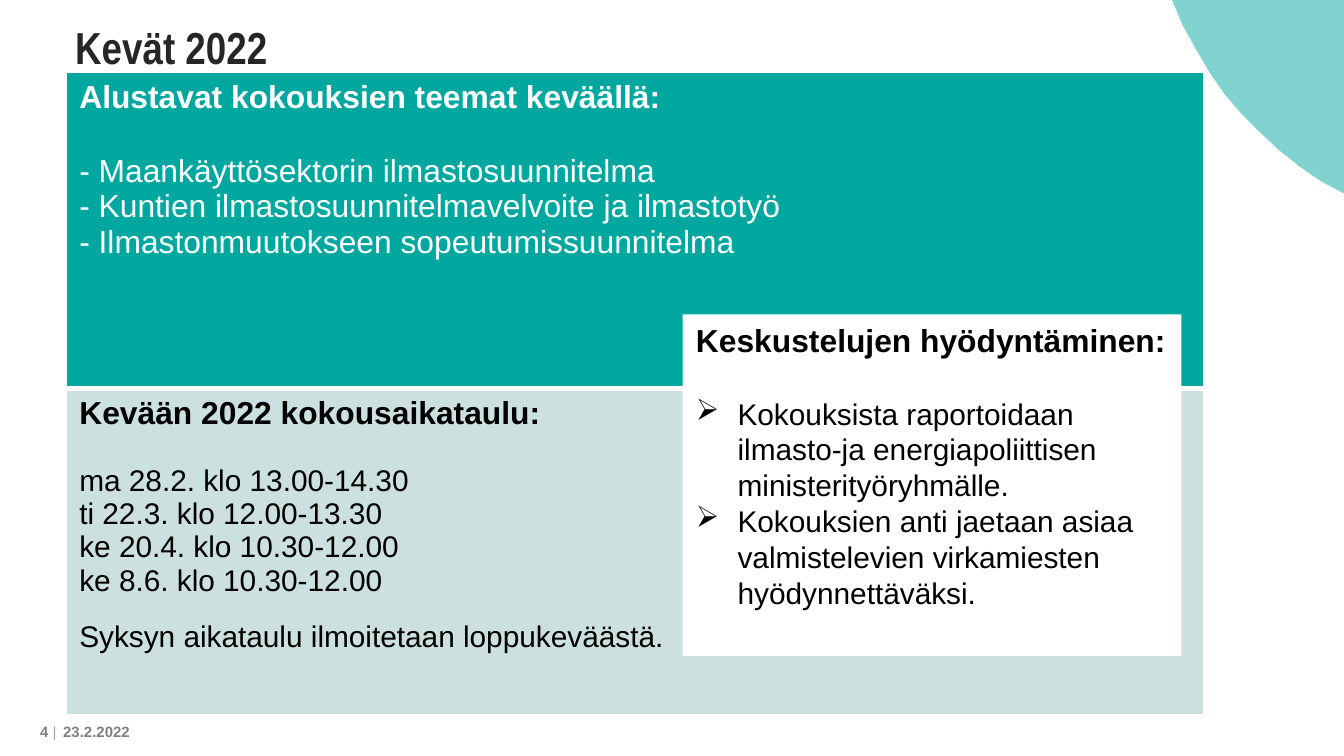
"""Build the spring 2022 meeting schedule slide."""
from dataclasses import dataclass

from lxml import etree
from pptx import Presentation
from pptx import util as u
from pptx.dml.color import RGBColor
from pptx.enum import shapes, text
from pptx.oxml import ns

WHITE, BLACK, GREY = "FFFFFF", "000000", "808080"


@dataclass
class Line:
    words: str
    size: float = 16
    bold: bool = False
    before: float = 0
    bullet: str = ""


@dataclass
class Section:
    height: float
    fill: str
    color: str
    lines: list[Line]
    bottom_border: float


SECTIONS = [
    Section(2.35, "00A79F", WHITE, [
        Line("Alustavat kokouksien teemat keväällä:", 17, True),
        Line("- Maankäyttösektorin ilmastosuunnitelma", 17, before=20.5),
        Line("- Kuntien ilmastosuunnitelmavelvoite ja ilmastotyö", 17),
        Line("- Ilmastonmuutokseen sopeutumissuunnitelma", 17),
    ], 3),
    Section(2.43, "CCE1DF", BLACK, [
        Line("Kevään 2022 kokousaikataulu:", 17, True),
        Line("ma 28.2. klo 13.00-14.30", before=18.2),
        Line("ti 22.3. klo 12.00-13.30"),
        Line("ke 20.4. klo 10.30-12.00"),
        Line("ke 8.6. klo 10.30-12.00"),
        Line("Syksyn aikataulu ilmoitetaan loppukeväästä.", before=12.2),
    ], 1),
]
USES = [
    Line("Keskustelujen hyödyntäminen:", 17, True),
    Line("Kokouksista raportoidaan ilmasto-ja energiapoliittisen ministerityöryhmälle.",
         before=19.3, bullet="➢"),
    Line("Kokouksien anti jaetaan asiaa valmistelevien virkamiesten hyödynnettäväksi.",
         bullet="➢"),
]
ARC = [(8.72, 0), (8.8, 0.19), (8.9, 0.37), (9, 0.54), (9.11, 0.7), (9.24, 0.85),
       (9.38, 0.99), (9.52, 1.12), (9.67, 1.24), (9.83, 1.35), (10, 1.44), (10, 0)]


def rgb(value: str) -> RGBColor:
    return RGBColor.from_string(value)


def box(left: float, top: float, width: float, height: float) -> list[int]:
    return [u.Inches(v) for v in (left, top, width, height)]


def fill_with(part, color: str) -> None:
    part.fill.solid()
    part.fill.fore_color.rgb = rgb(color)


def style(run, size: float, color: str, bold: bool, name: str = "Arial") -> None:
    run.font.size, run.font.bold, run.font.name = u.Pt(size), bold, name
    run.font.color.rgb = rgb(color)


def write(frame, lines: list[Line], color: str) -> None:
    frame.text = "\n".join(line.words for line in lines)
    for paragraph, line in zip(frame.paragraphs, lines):
        paragraph.alignment = text.PP_ALIGN.LEFT
        if line.bullet:
            properties = paragraph._p.get_or_add_pPr()
            properties.set("marL", str(u.Inches(0.31)))
            properties.set("indent", str(-u.Inches(0.31)))
            etree.SubElement(properties, ns.qn("a:buChar"), char=line.bullet)
        paragraph.space_before = u.Pt(line.before)
        style(paragraph.runs[0], line.size, color, line.bold)


def add_borders(cell, bottom: float, top: float) -> None:
    properties = cell._tc.get_or_add_tcPr()
    widths = {"a:lnL": 1, "a:lnR": 1, "a:lnT": top, "a:lnB": bottom}
    for position, (tag, width) in enumerate(widths.items()):
        border = etree.Element(ns.qn(tag), w=str(u.Pt(width)))
        solid = etree.SubElement(border, ns.qn("a:solidFill"))
        etree.SubElement(solid, ns.qn("a:srgbClr"), val=WHITE)
        properties.insert(position, border)


def add_sections(slide, sections: list[Section]) -> None:
    height = sum(section.height for section in sections)
    table = slide.shapes.add_table(len(sections), 1, *box(0.49, 0.54, 8.47, height)).table
    table.first_row = table.horz_banding = False
    top = 1
    for row, section in zip(table.rows, sections):
        row.height = u.Inches(section.height)
        cell = row.cells[0]
        fill_with(cell, section.fill)
        add_borders(cell, section.bottom_border, top)
        write(cell.text_frame, section.lines, section.color)
        top = section.bottom_border


def add_corner(slide) -> None:
    points = [(u.Inches(x), u.Inches(y)) for x, y in ARC]
    builder = slide.shapes.build_freeform(*points[0])
    builder.add_line_segments(points[1:], close=True)
    corner = builder.convert_to_shape()
    corner.shadow.inherit = False
    fill_with(corner, "80D3CF")
    corner.line.fill.background()


def add_title(slide, words: str) -> None:
    title = slide.shapes.title
    title.left, title.top, title.width, title.height = box(0.46, -0.03, 8.5, 0.63)
    frame = title.text_frame
    frame.text = words
    frame.vertical_anchor = text.MSO_ANCHOR.BOTTOM
    frame.paragraphs[0].alignment = text.PP_ALIGN.LEFT
    style(frame.paragraphs[0].runs[0], 24, "262626", True, "Arial Narrow")


def add_footer(slide, left: float, width: float, right_inset: float, words: str):
    frame = slide.shapes.add_textbox(*box(left, 5.33, width, 0.22)).text_frame
    frame.word_wrap = True
    frame.vertical_anchor = text.MSO_ANCHOR.MIDDLE
    frame.margin_left = frame.margin_top = frame.margin_bottom = 0
    frame.margin_right = u.Inches(right_inset)
    paragraph = frame.paragraphs[0]
    paragraph.text = words
    style(paragraph.runs[0], 8, GREY, True)
    return paragraph


def add_uses(slide) -> None:
    panel = slide.shapes.add_shape(shapes.MSO_SHAPE.RECTANGLE, *box(5.08, 2.34, 3.71, 2.54))
    panel.shadow.inherit = False
    fill_with(panel, WHITE)
    panel.line.fill.background()
    panel.text_frame.word_wrap = True
    panel.text_frame.vertical_anchor = text.MSO_ANCHOR.TOP
    write(panel.text_frame, USES, BLACK)


def main() -> None:
    deck = Presentation()
    deck.slide_width, deck.slide_height = u.Inches(10), u.Inches(5.625)
    slide = deck.slides.add_slide(deck.slide_layouts[5])
    add_corner(slide)
    add_sections(slide, SECTIONS)
    add_title(slide, "Kevät 2022")
    add_footer(slide, 0.47, 0.75, 0, "23.2.2022")
    number = add_footer(slide, 0, 0.44, 0.02, "4 ")
    number.alignment = text.PP_ALIGN.RIGHT
    divider = number.add_run()
    divider.text = "|"
    style(divider, 8, "A6A6A6", False)
    add_uses(slide)
    deck.save("out.pptx")


if __name__ == "__main__":
    main()
